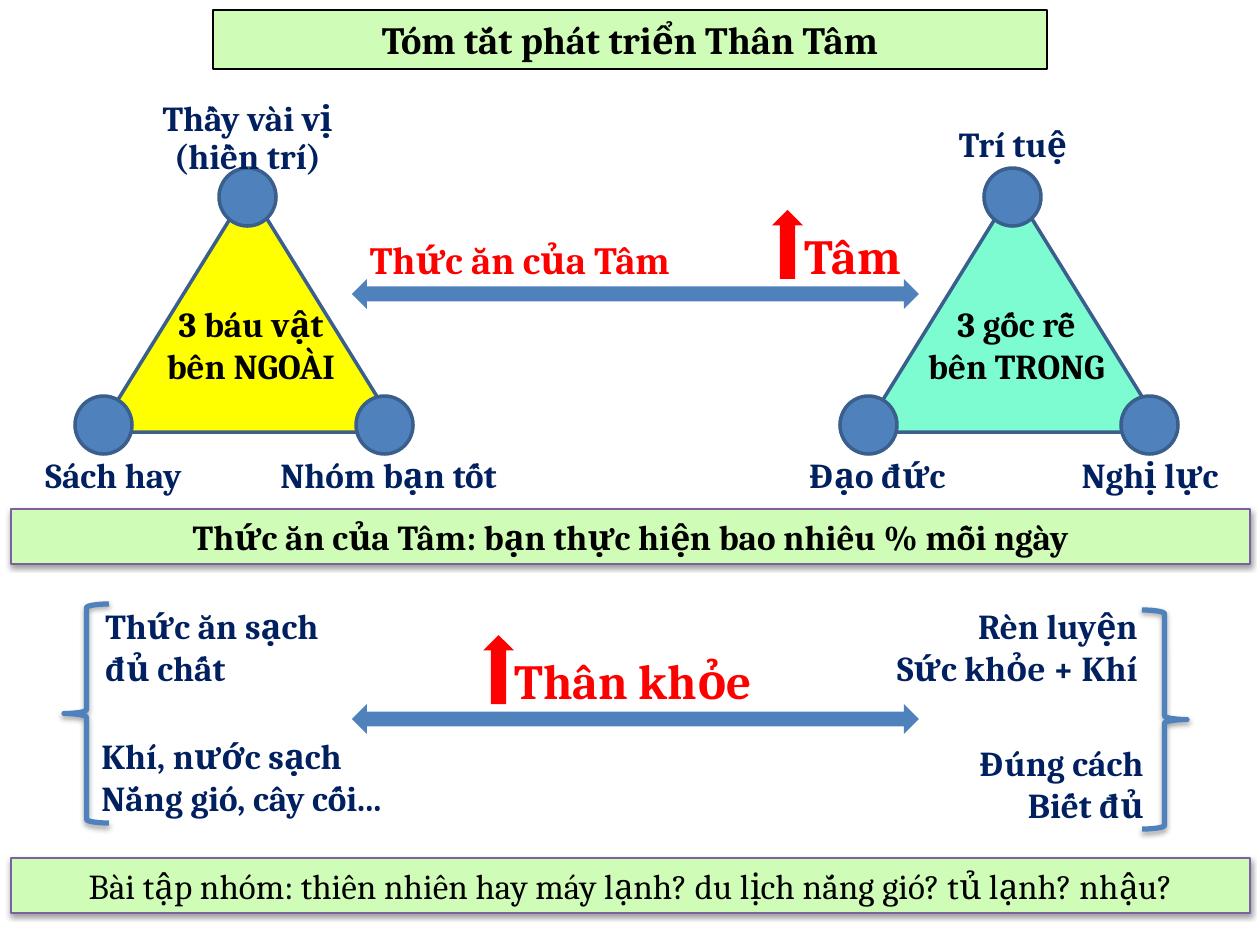
import pptx
import pptx.dml.color
import pptx.enum.shapes
import pptx.enum.text
import pptx.oxml
import pptx.oxml.ns
import pptx.util

RGB = pptx.dml.color.RGBColor
SHAPE = pptx.enum.shapes.MSO_SHAPE
ALIGN = pptx.enum.text.PP_ALIGN
ANCHOR = pptx.enum.text.MSO_ANCHOR

BLACK = RGB(0x00, 0x00, 0x00)
NAVY = RGB(0x00, 0x20, 0x60)
RED = RGB(0xFF, 0x00, 0x00)
BLUE = RGB(0x4F, 0x81, 0xBD)
DARK_BLUE = RGB(0x3A, 0x5F, 0x8C)
PURPLE = RGB(0x7D, 0x60, 0xA0)
PALE_GREEN = RGB(0xCF, 0xFC, 0xB6)
YELLOW = RGB(0xFF, 0xFF, 0x00)
MINT = RGB(0x7D, 0xFB, 0xD1)

FONT = "Cambria"
PX_PER_INCH = 126


def px(length):
    return pptx.util.Emu(round(length * 914400 / PX_PER_INCH))


def format_text(frame, size, color, bold=True, align=ALIGN.CENTER, spacing=None):
    frame.word_wrap = True
    for paragraph in frame.paragraphs:
        paragraph.alignment = align
        if spacing:
            paragraph.line_spacing = spacing
        for run in paragraph.runs:
            run.font.name = FONT
            run.font.size = pptx.util.Pt(size)
            run.font.bold = bold
            run.font.color.rgb = color


def add_label(slide, box, text, size=20, color=NAVY, **style):
    label = slide.shapes.add_textbox(*map(px, box))
    label.text_frame.text = text
    format_text(label.text_frame, size, color, **style)
    return label


def paint(shape, fill=None, line=None, width=0.75):
    if fill is None:
        shape.fill.background()
    else:
        shape.fill.solid()
        shape.fill.fore_color.rgb = fill
    if line is None:
        shape.line.fill.background()
    else:
        shape.line.color.rgb = line
        shape.line.width = pptx.util.Pt(width)


def add_figure(slide, preset, box, **colors):
    figure = slide.shapes.add_shape(preset, *map(px, box))
    figure.shadow.inherit = False
    paint(figure, **colors)
    return figure


def cast_shadow(shape, opacity, distance):
    """Give the shape a soft black shadow falling straight down."""
    effects = shape._element.spPr.find(pptx.oxml.ns.qn("a:effectLst"))
    effects.append(pptx.oxml.parse_xml(
        f'<a:outerShdw {pptx.oxml.ns.nsdecls("a")} blurRad="40000" '
        f'dist="{pptx.util.Pt(distance)}" dir="5400000" rotWithShape="0">'
        f'<a:srgbClr val="000000"><a:alpha val="{opacity * 1000}"/></a:srgbClr>'
        '</a:outerShdw>'))


def add_title(slide, text):
    title = slide.shapes.title
    title.left, title.top, title.width, title.height = map(px, (213, 10, 834, 59))
    paint(title, PALE_GREEN, BLACK)
    title.text_frame.text = text
    title.text_frame.vertical_anchor = ANCHOR.MIDDLE
    format_text(title.text_frame, 22, BLACK)


def add_banner(slide, top, text, bold=True):
    banner = add_figure(slide, SHAPE.RECTANGLE, (11, top, 1239, 55),
                        fill=PALE_GREEN, line=PURPLE)
    cast_shadow(banner, 38, 1.6)
    banner.text_frame.text = text
    format_text(banner.text_frame, 20, BLACK, bold)


def add_triangle(slide, left, fill):
    """Draw a triangle with a round node on each corner."""
    outline = {"line": DARK_BLUE, "width": 2}
    add_figure(slide, SHAPE.ISOSCELES_TRIANGLE, (left, 189, 301, 243), fill=fill, **outline)
    for offset, top in ((121, 168), (-23, 396), (258, 396)):
        add_figure(slide, SHAPE.OVAL, (left + offset, top, 57, 58), fill=BLUE, **outline)


def add_brace(slide, left, top, rotation=0):
    brace = add_figure(slide, SHAPE.LEFT_BRACE, (left, top, 45, 219), line=BLUE, width=3)
    brace.rotation = rotation
    cast_shadow(brace, 35, 1.8)


def add_exchange(slide, top, growth_left):
    """Draw the two-way arrow and the red arrow that rises above it."""
    add_figure(slide, SHAPE.LEFT_RIGHT_ARROW, (352, top, 567, 30), fill=BLUE)
    add_figure(slide, SHAPE.UP_ARROW, (growth_left, top - 69, 31, 69), fill=RED)


def add_mind_label(slide):
    """Write the food of the mind and, at a tab stop, the mind itself."""
    label = add_label(slide, (352, 226, 567, 67), "Thức ăn của Tâm\t", 22, RED,
                      align=ALIGN.LEFT, spacing=0.9)
    label.text_frame.margin_left = px(18)
    paragraph = label.text_frame.paragraphs[0]
    paragraph._p.get_or_add_pPr().append(pptx.oxml.parse_xml(
        f'<a:tabLst {pptx.oxml.ns.nsdecls("a")}><a:tab pos="{px(435)}" algn="l"/></a:tabLst>'))
    mind = paragraph.add_run()
    mind.text = "Tâm"
    mind.font.name = FONT
    mind.font.size = pptx.util.Pt(28)
    mind.font.bold = True
    mind.font.color.rgb = RED


def main():
    deck = pptx.Presentation()
    deck.slide_width, deck.slide_height = px(1260), px(945)
    slide = deck.slides.add_slide(deck.slide_layouts[5])
    add_title(slide, "Tóm tắt phát triển Thân Tâm")

    add_triangle(slide, 98, YELLOW)
    add_triangle(slide, 863, MINT)
    add_label(slide, (132, 95, 231, 89), "Thầy vài vị\v(hiền trí)", spacing=0.9)
    for box, corner in (
        ((18, 447, 191, 55), "Sách hay"),
        ((267, 447, 243, 55), "Nhóm bạn tốt"),
        ((918, 116, 190, 55), "Trí tuệ"),
        ((782, 447, 191, 55), "Đạo đức"),
        ((1059, 447, 182, 55), "Nghị lực"),
    ):
        add_label(slide, box, corner)
    add_label(slide, (151, 296, 200, 97), "3 báu vật\nbên NGOÀI", color=BLACK)
    add_label(slide, (911, 296, 211, 97), "3 gốc rễ\nbên TRONG", color=BLACK)
    add_exchange(slide, 279, 772)
    add_mind_label(slide)

    add_banner(slide, 509, "Thức ăn của Tâm: bạn thực hiện bao nhiêu % mỗi ngày")

    add_label(slide, (93, 598, 275, 97), "Thức ăn sạch\vđủ chất", align=ALIGN.LEFT)
    add_label(slide, (89, 728, 324, 97), "Khí, nước sạch\nNắng gió, cây cối...",
              align=ALIGN.LEFT)
    add_label(slide, (871, 598, 279, 97), "Rèn luyện\nSức khỏe + Khí", align=ALIGN.RIGHT)
    add_label(slide, (871, 735, 285, 97), "Đúng cách\vBiết đủ", align=ALIGN.RIGHT)
    add_exchange(slide, 704, 483)
    add_label(slide, (350, 651, 567, 67), "Thân khỏe", 28, RED, spacing=0.9)
    add_brace(slide, 64, 604)
    add_brace(slide, 1142, 610, rotation=180)

    add_banner(slide, 858, "Bài tập nhóm: thiên nhiên hay máy lạnh? du lịch nắng gió? "
               "tủ lạnh? nhậu?", bold=False)
    deck.save("out.pptx")


if __name__ == "__main__":
    main()
